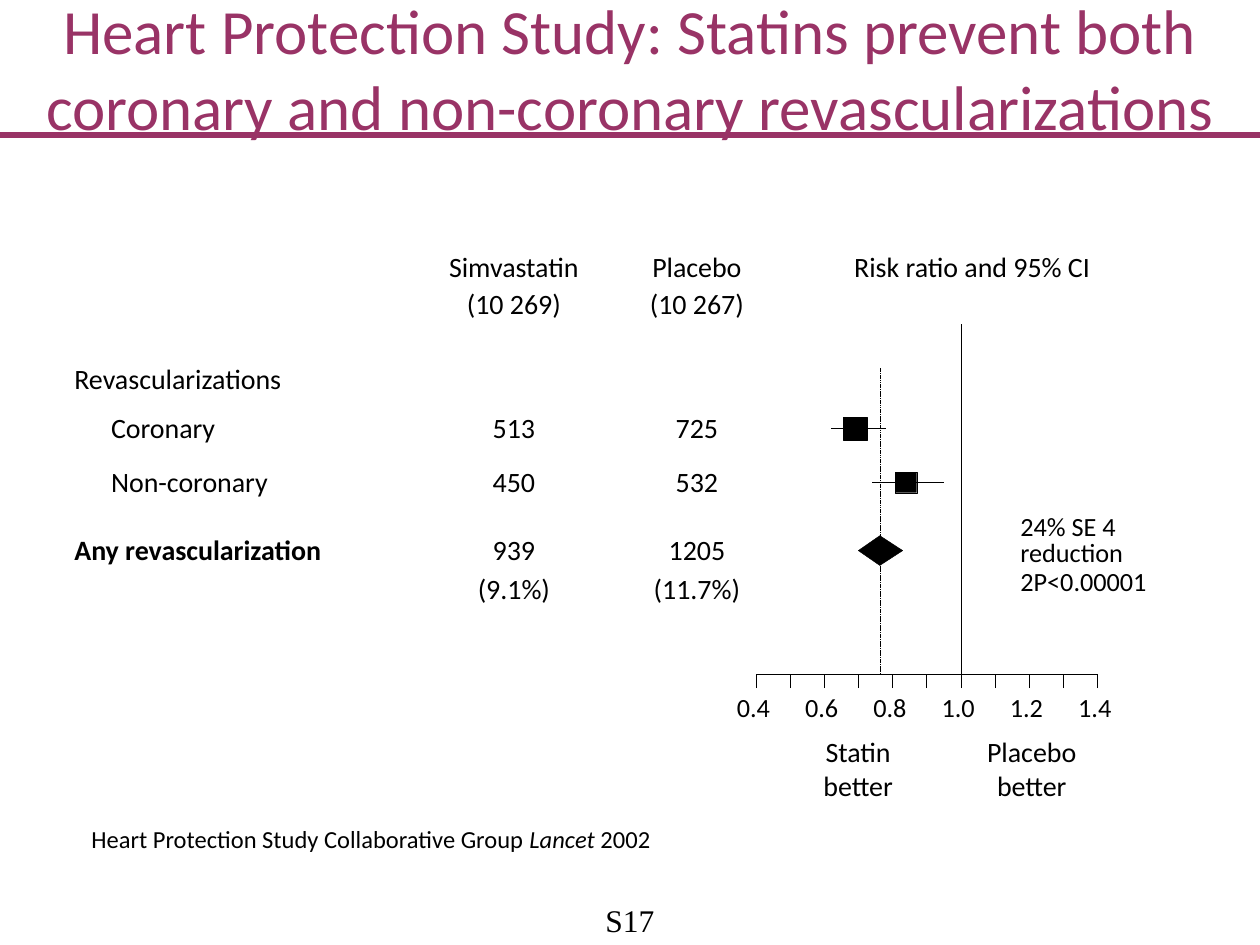
from dataclasses import dataclass

from lxml import etree
from pptx import Presentation
from pptx.dml.color import RGBColor
from pptx.enum import dml, shapes, text
from pptx.oxml.ns import qn
from pptx.util import Cm, Pt

COLORS = {"accent": "993366", "ink": "000000"}
LEFT, CENTER, RIGHT = text.PP_ALIGN.LEFT, text.PP_ALIGN.CENTER, text.PP_ALIGN.RIGHT

# Lengths are centimetres.
SIMVASTATIN_X, PLACEBO_X = 10.36, 14.05
AXIS_LEFT, AXIS_Y, AXIS_MIN, RATIO_UNIT = 15.24, 13.59, 0.4, 6.88
POOLED_RATIO = 0.763


@dataclass
class Label:
    text: str
    x: float  # left edge, or the middle when centred
    y: float
    w: float
    align: int = LEFT
    size: int = 16
    h: float = 0.69
    bold: bool = False


@dataclass
class Estimate:
    low: float
    ratio: float
    high: float
    y: float
    w: float
    h: float


LABELS = [
    Label("Risk ratio and 95% CI", 17.22, 5.03, 4.83),
    Label("Simvastatin", SIMVASTATIN_X, 5.03, 2.64, CENTER),
    Label("Placebo", PLACEBO_X, 5.03, 1.83, CENTER),
    Label("(10 269)", SIMVASTATIN_X, 5.77, 1.93, CENTER),
    Label("(10 267)", PLACEBO_X, 5.77, 1.93, CENTER),
    Label("Revascularizations", 1.5, 7.29, 4.22),
    Label("Coronary", 2.24, 8.28, 2.13),
    Label("513", SIMVASTATIN_X, 8.28, 0.86, CENTER),
    Label("725", PLACEBO_X, 8.28, 0.86, CENTER),
    Label("Non-coronary", 2.24, 9.37, 3.2),
    Label("450", SIMVASTATIN_X, 9.37, 0.86, CENTER),
    Label("532", PLACEBO_X, 9.37, 0.86, CENTER),
    Label("Any revascularization", 1.5, 10.74, 5.05, bold=True),
    Label("939", SIMVASTATIN_X, 10.74, 0.86, CENTER),
    Label("1205", PLACEBO_X, 10.74, 1.17, CENTER),
    Label("(9.1%)", SIMVASTATIN_X, 11.53, 1.47, CENTER),
    Label("(11.7%)", PLACEBO_X, 11.53, 1.78, CENTER),
    Label("24% SE 4", 20.57, 10.29, 1.96, size=15, h=0.64),
    Label("reduction", 20.57, 10.82, 2.11, size=15, h=0.64),
    Label("2P<0.00001", 20.57, 11.4, 2.59, size=15, h=0.64),
    Label("Statin\nbetter", 17.3, 14.81, 1.42, CENTER, h=1.37),
    Label("Placebo\nbetter", 20.8, 14.81, 1.83, CENTER, h=1.37),
]
ESTIMATES = [
    Estimate(0.62, 0.69, 0.78, 8.64, 0.48, 0.46),
    Estimate(0.74, 0.84, 0.95, 9.73, 0.43, 0.41),
]
POOLED = Estimate(0.7, POOLED_RATIO, 0.83, 11.1, 0.89, 0.6)


def rgb(name: str) -> RGBColor:
    return RGBColor.from_string(COLORS[name])


def axis_x(ratio: float) -> float:
    """Horizontal position of a risk ratio on the axis."""
    return AXIS_LEFT + (ratio - AXIS_MIN) * RATIO_UNIT


def add_run(p, content: str, *, size: float, color: str = "ink",
            font: str = "Calibri", bold: bool = False, italic: bool = False) -> None:
    r = p.add_run()
    r.text = content
    r.font.name, r.font.size = font, Pt(size)
    r.font.bold, r.font.italic = bold, italic
    r.font.color.rgb = rgb(color)


def add_box(slide, x: float, y: float, w: float, h: float, inset: bool = False):
    """Add a non-wrapping text box and return its text frame."""
    tf = slide.shapes.add_textbox(Cm(x), Cm(y), Cm(w), Cm(h)).text_frame
    tf.word_wrap = False
    tf.auto_size = text.MSO_AUTO_SIZE.SHAPE_TO_FIT_TEXT
    if not inset:
        tf.margin_left = tf.margin_right = tf.margin_top = tf.margin_bottom = 0
    return tf


def add_label(slide, label: Label, font: str = "Calibri") -> None:
    left = label.x - label.w / 2 if label.align == CENTER else label.x
    tf = add_box(slide, left, label.y, label.w, label.h)
    for i, line in enumerate(label.text.split("\n")):
        p = tf.add_paragraph() if i else tf.paragraphs[0]
        p.alignment = label.align
        add_run(p, line, size=label.size, font=font, bold=label.bold)


def add_line(slide, x1: float, y1: float, x2: float, y2: float, *,
             color: str = "ink", width: float = 0.25, dash=None) -> None:
    line = slide.shapes.add_connector(
        shapes.MSO_CONNECTOR.STRAIGHT, Cm(x1), Cm(y1), Cm(x2), Cm(y2))
    line.line.color.rgb = rgb(color)
    line.line.width = Pt(width)
    if dash:
        line.line.dash_style = dash
    etree.SubElement(line._element.spPr, qn("a:effectLst"))


def paint(sp) -> None:
    sp.shadow.inherit = False
    sp.fill.solid()
    sp.fill.fore_color.rgb = rgb("ink")
    sp.line.color.rgb = rgb("ink")
    sp.line.width = Pt(0.25)


def add_estimate(slide, e: Estimate) -> None:
    add_line(slide, axis_x(e.low), e.y, axis_x(e.high), e.y)
    paint(slide.shapes.add_shape(
        shapes.MSO_SHAPE.RECTANGLE, Cm(axis_x(e.ratio) - e.w / 2),
        Cm(e.y - e.h / 2), Cm(e.w), Cm(e.h)))


def add_pooled_diamond(slide, e: Estimate) -> None:
    left, middle, right = (Cm(axis_x(v)) for v in (e.low, e.ratio, e.high))
    y, top, bottom = Cm(e.y), Cm(e.y - e.h / 2), Cm(e.y + e.h / 2)
    builder = slide.shapes.build_freeform(left, y)
    builder.add_line_segments([(middle, bottom), (right, y), (middle, top)], close=True)
    paint(builder.convert_to_shape())


def add_axis(slide) -> None:
    add_line(slide, axis_x(0.4), AXIS_Y, axis_x(1.4), AXIS_Y)
    add_line(slide, axis_x(1), 13.67, axis_x(1), 6.53)
    add_line(slide, axis_x(POOLED_RATIO), AXIS_Y, axis_x(POOLED_RATIO), 7.42,
             dash=dml.MSO_LINE.SQUARE_DOT)
    for tenths in range(4, 15):
        x = axis_x(tenths / 10)
        add_line(slide, x, AXIS_Y + 0.28, x, AXIS_Y)
        if tenths % 2 == 0:
            add_label(slide, Label(f"{tenths / 10:.1f}", x - 0.05, 13.94, 0.69,
                                   CENTER, size=15, h=0.64))


def add_title(slide) -> None:
    sp = slide.shapes.title
    sp.left, sp.top, sp.width, sp.height = 0, 0, Cm(25.4), Cm(2.72)
    tf = sp.text_frame
    tf.word_wrap = True
    tf.auto_size = text.MSO_AUTO_SIZE.NONE
    tf.vertical_anchor = text.MSO_ANCHOR.MIDDLE
    p = tf.paragraphs[0]
    p.alignment = CENTER
    add_run(p, "Heart Protection Study: Statins prevent both coronary and "
            "non-coronary revascularizations", size=36, color="accent")


def add_citation(slide) -> None:
    tf = add_box(slide, 1.35, 16.54, 12.01, 0.79, inset=True)
    tf.vertical_anchor = text.MSO_ANCHOR.BOTTOM
    p = tf.paragraphs[0]
    p.alignment, p.line_spacing = RIGHT, 0.9
    add_run(p, "Heart Protection Study Collaborative Group ", size=14)
    add_run(p, "Lancet ", size=14, italic=True)
    add_run(p, "2002", size=14)


def main() -> None:
    prs = Presentation()
    prs.slide_width, prs.slide_height = Cm(25.4), Cm(19.05)
    slide = prs.slides.add_slide(prs.slide_layouts[5])
    add_title(slide)
    add_line(slide, 0, 2.72, 25.4, 2.72, color="accent", width=3)
    add_label(slide, Label("S17", 12.7, 18.16, 1.09, CENTER, size=18, h=0.76),
              font="Times New Roman")
    for label in LABELS:
        add_label(slide, label)
    for estimate in ESTIMATES:
        add_estimate(slide, estimate)
    add_pooled_diamond(slide, POOLED)
    add_axis(slide)
    add_citation(slide)
    prs.save("out.pptx")


if __name__ == "__main__":
    main()
